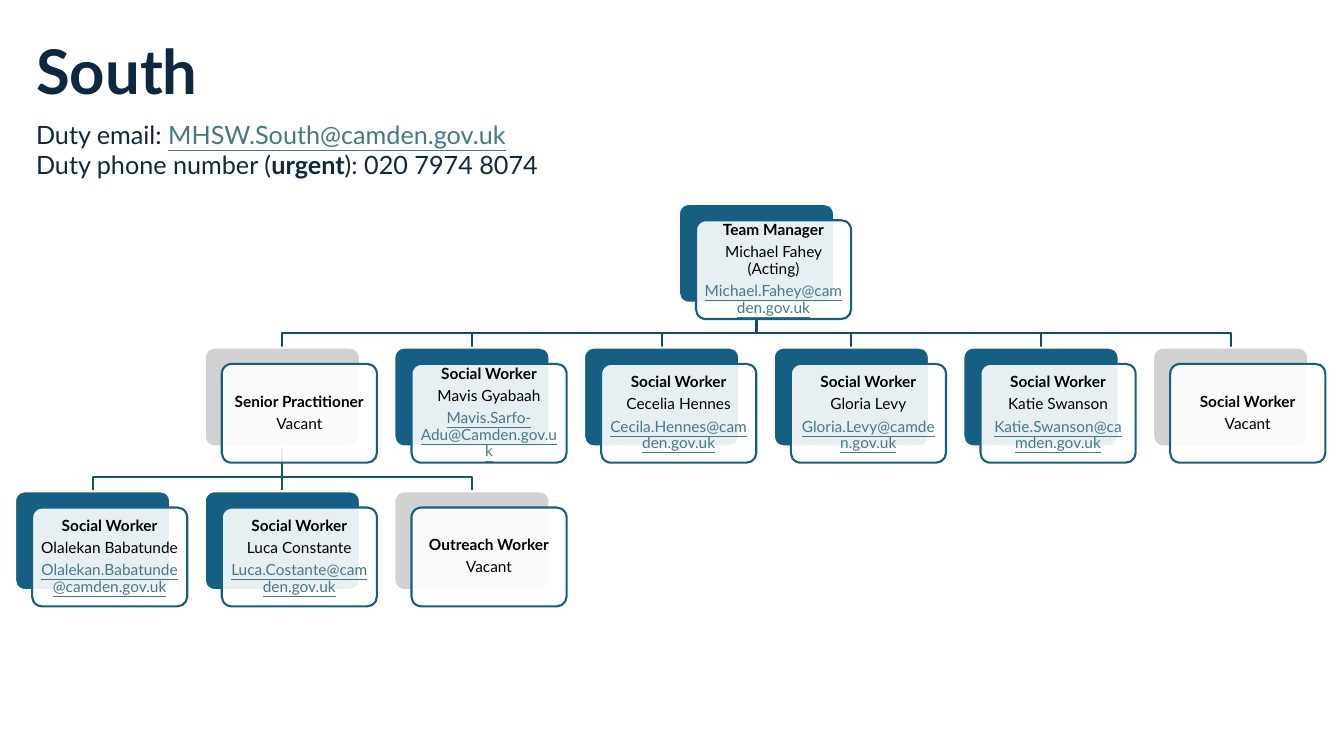
import pptx
import pptx.util
import pptx.dml.color
import pptx.enum.shapes
import pptx.enum.text
import pptx.oxml
import pptx.oxml.ns

Cm, Pt = pptx.util.Cm, pptx.util.Pt
RGBColor = pptx.dml.color.RGBColor
SHAPE = pptx.enum.shapes.MSO_SHAPE
ALIGN = pptx.enum.text.PP_ALIGN
MIDDLE = pptx.enum.text.MSO_ANCHOR.MIDDLE

NAVY = RGBColor(0x0E, 0x28, 0x41)
TEAL = RGBColor(0x15, 0x60, 0x82)
GREY = RGBColor(0xD1, 0xD1, 0xD1)
WHITE = RGBColor(0xFF, 0xFF, 0xFF)
BLACK = RGBColor(0, 0, 0)
LINK = RGBColor(0x46, 0x78, 0x86)
UPPER = RGBColor(0x11, 0x4D, 0x68)
LOWER = RGBColor(0x13, 0x57, 0x76)

# Card grid in centimetres
LEFT, TOP = 0.38, 5.14
STEP, DROP = 4.78, 3.62
WIDE, HIGH = 3.91, 2.49


def write(para, text, size=11, color=BLACK, bold=False, under=None):
    run = para.add_run()
    run.text = text
    font = run.font
    font.name, font.size, font.bold = "Lato", Pt(size), bold
    font.underline = under
    font.color.rgb = color


def card(x, y, fill, edge):
    box = slide.shapes.add_shape(SHAPE.ROUNDED_RECTANGLE,
                                 Cm(x), Cm(y), Cm(WIDE), Cm(HIGH))
    box.adjustments[0] = 0.1
    box.shadow.inherit = False
    box.fill.solid()
    box.fill.fore_color.rgb = fill
    box.line.color.rgb = edge
    box.line.width = Pt(1.5)
    return box


deck = pptx.Presentation()
deck.slide_width, deck.slide_height = Cm(33.87), Cm(19.05)
slide = deck.slides.add_slide(deck.slide_layouts[5])

# Title
title = slide.shapes.title
title.left, title.top, title.width, title.height = Cm(0.66), Cm(0.91), Cm(29.2), Cm(1.96)
frame = title.text_frame
frame.auto_size = pptx.enum.text.MSO_AUTO_SIZE.NONE
frame.vertical_anchor = MIDDLE
para = frame.paragraphs[0]
para.alignment = ALIGN.LEFT
para.line_spacing = 0.9
write(para, "South", size=44, color=NAVY, bold=True)

# Duty contacts
frame = slide.shapes.add_textbox(Cm(0.66), Cm(2.87), Cm(13.23), Cm(1.8)).text_frame
frame.word_wrap = True
para = frame.paragraphs[0]
write(para, "Duty email: ", size=18, color=NAVY)
write(para, "MHSW.South@camden.gov.uk", size=18, color=LINK, under=True)
para = frame.add_paragraph()
write(para, "Duty phone number (", size=18, color=NAVY)
write(para, "urgent", size=18, color=NAVY, bold=True)
write(para, "): 020 7974 8074", size=18, color=NAVY)

# Branches: parent column, parent row, child columns, colour
for boss, row, kids, color in [
    (3.5, 0, [6, 5, 4, 3, 2, 1], UPPER),
    (1, 1, [2, 1, 0], LOWER),
]:
    start = LEFT + boss * STEP + WIDE / 2
    y = TOP + row * DROP + HIGH
    end = TOP + (row + 1) * DROP
    for kid in kids:
        x = LEFT + kid * STEP + WIDE / 2
        if kid == boss:
            branch = slide.shapes.add_connector(
                pptx.enum.shapes.MSO_CONNECTOR.STRAIGHT, Cm(x), Cm(y), Cm(x), Cm(end))
            branch._element.spPr.append(pptx.oxml.parse_xml(
                "<a:effectLst %s/>" % pptx.oxml.ns.nsdecls("a")))
        else:
            path = slide.shapes.build_freeform(Cm(start), Cm(y))
            path.add_line_segments([(Cm(start), Cm(y + 0.77)), (Cm(x), Cm(y + 0.77)),
                                    (Cm(x), Cm(end))], close=False)
            branch = path.convert_to_shape()
            branch.fill.background()
            branch.shadow.inherit = False
        branch.line.color.rgb = color
        branch.line.width = Pt(1.5)

# Staff: column, row, role, name, email
for col, row, role, name, mail in [
    (3.5, 0, "Team Manager", "Michael Fahey (Acting)", "Michael.Fahey@camden.gov.uk"),
    (1, 1, "Senior Practitioner", "Vacant", ""),
    (0, 2, "Social Worker", "Olalekan Babatunde", "Olalekan.Babatunde@camden.gov.uk"),
    (1, 2, "Social Worker", "Luca Constante", "Luca.Costante@camden.gov.uk"),
    (2, 2, "Outreach Worker", "Vacant", ""),
    (2, 1, "Social Worker", "Mavis Gyabaah", "Mavis.Sarfo-Adu@Camden.gov.uk"),
    (3, 1, "Social Worker", "Cecelia Hennes", "Cecila.Hennes@camden.gov.uk"),
    (4, 1, "Social Worker", "Gloria Levy", "Gloria.Levy@camden.gov.uk"),
    (5, 1, "Social Worker", "Katie Swanson", "Katie.Swanson@camden.gov.uk"),
    (6, 1, "Social Worker", "Vacant", ""),
]:
    x, y = LEFT + col * STEP, TOP + row * DROP
    card(x, y, TEAL if mail else GREY, WHITE)
    front = card(x + 0.43, y + 0.41, WHITE, TEAL)

    # Front card lets a little of the back card through
    tint = front._element.spPr.find(pptx.oxml.ns.qn("a:solidFill"))[0]
    tint.append(pptx.oxml.parse_xml(
        '<a:alpha %s val="90000"/>' % pptx.oxml.ns.nsdecls("a")))

    frame = front.text_frame
    frame.word_wrap = True
    frame.vertical_anchor = MIDDLE
    frame.margin_left = frame.margin_right = Cm(0.13)
    frame.margin_top = frame.margin_bottom = Cm(0.13)
    parts = [(role, {"bold": True}), (name, {})]
    if mail:
        parts.append((mail, {"color": LINK, "under": True}))
    for i, (text, look) in enumerate(parts):
        para = frame.add_paragraph() if i else frame.paragraphs[0]
        para.alignment = ALIGN.CENTER
        para.line_spacing = 0.9
        para.space_after = Pt(3.85)
        write(para, text, **look)

deck.save("out.pptx")
